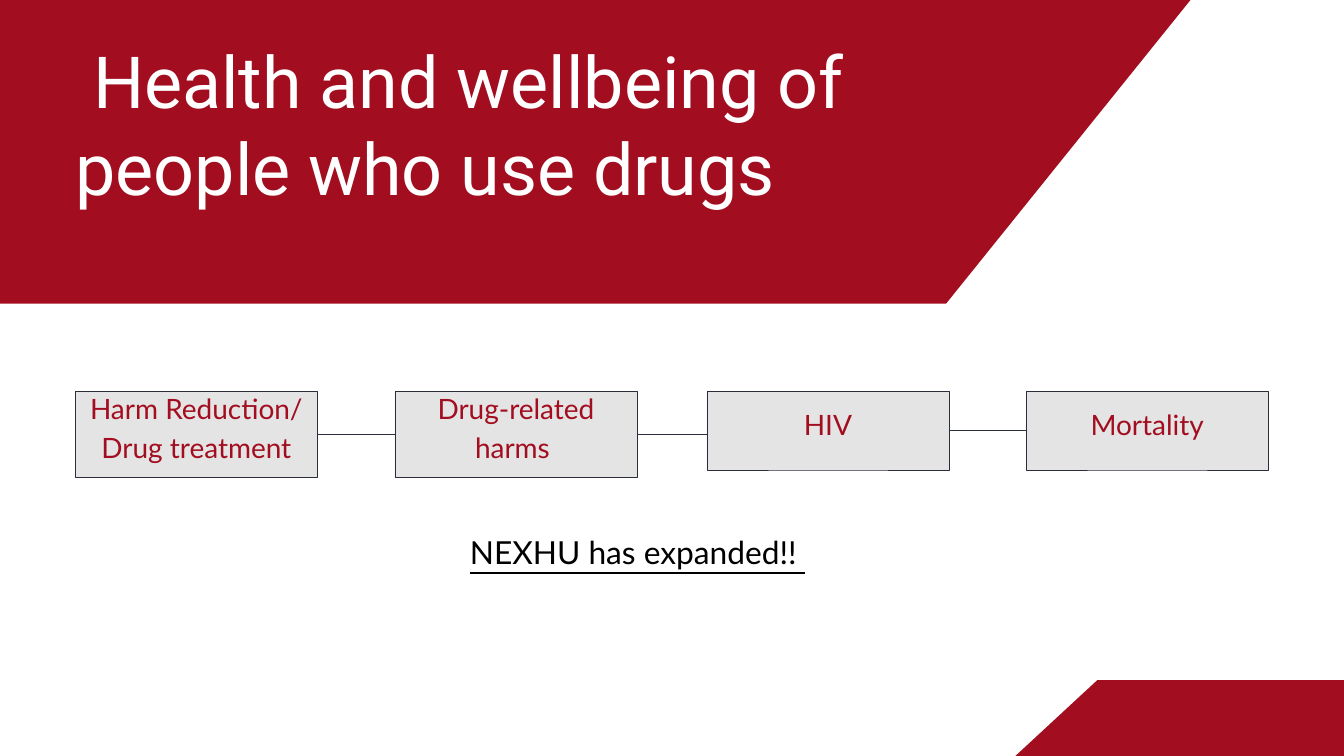
from pptx import Presentation
from pptx.dml.color import RGBColor
from pptx.enum.shapes import MSO_CONNECTOR, MSO_SHAPE
from pptx.enum.text import MSO_ANCHOR, PP_ALIGN
from pptx.oxml.ns import qn
from pptx.util import Cm, Pt
from lxml.etree import SubElement

RED = RGBColor(0xA2, 0x0E, 0x20)
GREY = RGBColor(0xE4, 0xE4, 0xE4)
DARK = RGBColor(0x2A, 0x2E, 0x3A)
WHITE = RGBColor(0xFF, 0xFF, 0xFF)
BLACK = RGBColor(0, 0, 0)

BOX_WIDTH = 9.15
BOX_TOP = 14.79
LABEL_TOP = 14.1
TOPICS = [
    ("Harm Reduction/ Drug treatment", 2.85, 3.27),
    ("Drug-related harms ", 14.93, 3.27),
    ("HIV", 26.72, 2.98),
    ("Mortality", 38.79, 2.98),
]
LINKS_Y = [16.43, 16.43, 16.28]


class SlideBuilder:
    line_width = Pt(0.75)

    def __init__(self, slide):
        self.shapes = slide.shapes

    def band(self, points):
        corners = [(Cm(x), Cm(y)) for x, y in points]
        builder = self.shapes.build_freeform(*corners[0])
        builder.add_line_segments(corners[1:], close=True)
        shape = builder.convert_to_shape()
        shape.shadow.inherit = False
        shape.fill.solid()
        shape.fill.fore_color.rgb = RED
        shape.line.fill.background()

    def box(self, left, top, width, height):
        shape = self.shapes.add_shape(
            MSO_SHAPE.RECTANGLE, Cm(left), Cm(top), Cm(width), Cm(height))
        shape.shadow.inherit = False
        shape.fill.solid()
        shape.fill.fore_color.rgb = GREY
        shape.line.color.rgb = DARK
        shape.line.width = self.line_width

    def text(self, content, left, top, width, height, size, spacing, color,
             font="Lato", align=PP_ALIGN.CENTER, anchor=MSO_ANCHOR.TOP,
             inset=0, underline=False):
        shape = self.shapes.add_textbox(Cm(left), Cm(top), Cm(width), Cm(height))
        frame = shape.text_frame
        frame.word_wrap = True
        frame.vertical_anchor = anchor
        frame.margin_left = frame.margin_right = Cm(inset)
        frame.margin_top = frame.margin_bottom = Cm(inset)
        paragraph = frame.paragraphs[0]
        paragraph.alignment = align
        paragraph.line_spacing = Pt(spacing)
        run = paragraph.add_run()
        run.text = content
        run.font.name = font
        run.font.size = Pt(size)
        run.font.color.rgb = color
        run.font.underline = underline

    def link(self, start, end, y):
        connector = self.shapes.add_connector(
            MSO_CONNECTOR.STRAIGHT, Cm(start), Cm(y), Cm(end), Cm(y))
        connector.line.color.rgb = DARK
        connector.line.width = self.line_width
        SubElement(connector._element.spPr, qn("a:effectLst"))


def main():
    presentation = Presentation()
    presentation.slide_width = Cm(50.8)
    presentation.slide_height = Cm(28.58)
    builder = SlideBuilder(
        presentation.slides.add_slide(presentation.slide_layouts[6]))

    builder.band([(35.76, 11.48), (-0.58, 11.48), (-12.75, -3.68), (47.96, -3.68)])
    builder.text(" Health and wellbeing of people who use drugs",
                 2.85, 1.4, 33.3, 6.5, 77, 92.4, WHITE,
                 font="Roboto", align=PP_ALIGN.LEFT)

    for label, left, height in TOPICS:
        builder.box(left, BOX_TOP, BOX_WIDTH, height)
        builder.text(label, left, LABEL_TOP, BOX_WIDTH,
                     BOX_TOP + height - LABEL_TOP, 30, 42, RED,
                     anchor=MSO_ANCHOR.MIDDLE, inset=0.15)

    for before, after, y in zip(TOPICS, TOPICS[1:], LINKS_Y):
        builder.link(before[1] + BOX_WIDTH, after[1], y)

    builder.band([(41.48, 25.71), (51.28, 25.71), (54.38, 28.58), (38.38, 28.58)])
    builder.text("NEXHU has expanded!! ", 13.69, 19.91, 20.8, 1.6, 34, 47.6,
                 BLACK, underline=True)

    presentation.save("out.pptx")


if __name__ == "__main__":
    main()
